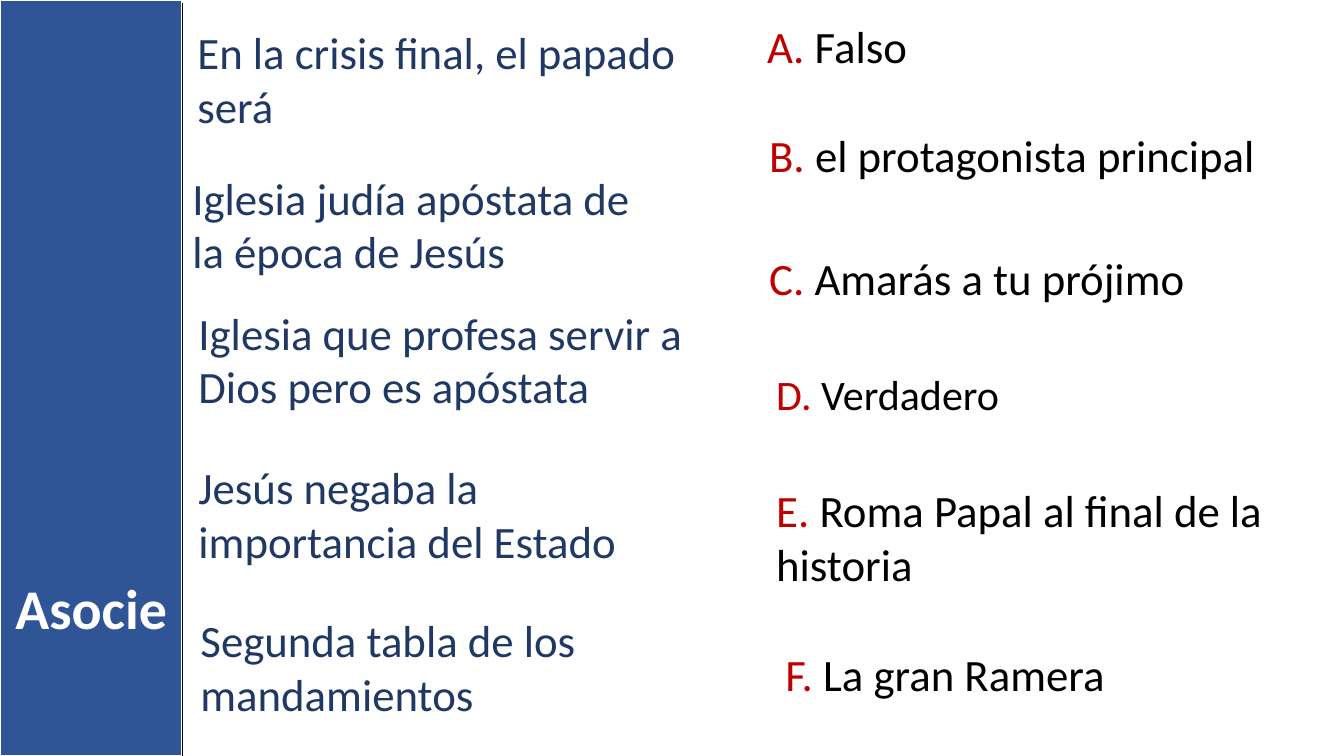
from dataclasses import dataclass

from lxml import etree
from pptx import Presentation
from pptx.dml.color import RGBColor
from pptx.enum.shapes import MSO_CONNECTOR, MSO_SHAPE
from pptx.enum.text import MSO_AUTO_SIZE, PP_ALIGN
from pptx.oxml.ns import qn
from pptx.util import Inches, Pt


@dataclass(frozen=True)
class Theme:
    font: str = "Calibri"
    band: RGBColor = RGBColor(0x2F, 0x55, 0x97)
    white: RGBColor = RGBColor(0xFF, 0xFF, 0xFF)
    black: RGBColor = RGBColor(0, 0, 0)
    prompt: RGBColor = RGBColor(0x20, 0x38, 0x64)
    letter: RGBColor = RGBColor(0xC0, 0, 0)
    title_size: int = 40
    body_size: int = 32
    small_size: int = 30


THEME = Theme()
SLIDE_W, SLIDE_H = 13.33, 7.5
BAND_W = 1.81
LEFT_X, RIGHT_X = BAND_W, 7.5
ONE_LINE, TWO_LINES = 0.64, 1.18

# Offset from the column's left edge, top, width, text
PROMPTS = [
    (0.05, 0.2, 5.11, "En la crisis final, el papado será"),
    (0, 1.64, 4.94, "Iglesia judía apóstata de la época de Jesús"),
    (0.06, 2.98, 5.1, "Iglesia que profesa servir a Dios pero es apóstata"),
    (0.06, 4.51, 4.94, "Jesús negaba la importancia del Estado"),
    (0.08, 6.03, 4.77, "Segunda tabla de los mandamientos"),
]
# Offset, top, width, height, type size, text
ANSWERS = [
    (0.01, 0.14, 5.04, ONE_LINE, THEME.body_size, "Falso"),
    (0.03, 1.22, 5.29, ONE_LINE, THEME.body_size, "el protagonista principal"),
    (0.03, 2.44, 4.88, ONE_LINE, THEME.body_size, "Amarás a tu prójimo"),
    (0.1, 3.61, 5.29, 0.61, THEME.small_size, "Verdadero"),
    (0.1, 4.74, 5.53, TWO_LINES, THEME.body_size, "Roma Papal al final de la historia"),
    (0.19, 6.37, 4.97, ONE_LINE, THEME.body_size, "La gran Ramera"),
]


def add_text(slide, box, runs, size):
    """Add one paragraph made of (text, colour) runs and return it."""
    tf = slide.shapes.add_textbox(*map(Inches, box)).text_frame
    tf.word_wrap = True
    tf.auto_size = MSO_AUTO_SIZE.SHAPE_TO_FIT_TEXT
    p = tf.paragraphs[0]
    p.font.name = THEME.font
    p.font.size = Pt(size)
    for text, color in runs:
        r = p.add_run()
        r.text = text
        r.font.color.rgb = color
    return p


def add_band(slide, x, y, w, h):
    sp = slide.shapes.add_shape(MSO_SHAPE.RECTANGLE, *map(Inches, (x, y, w, h)))
    sp.shadow.inherit = False
    sp.fill.solid()
    sp.fill.fore_color.rgb = THEME.band
    sp.line.color.rgb = THEME.white
    sp.line.width = Pt(1.5)


def add_band_title(slide, x, y, w, h, title):
    """Add the band's title and the rule along the band's right edge."""
    p = add_text(slide, (x, y + 5.64, w, 0.77), [(title, THEME.white)], THEME.title_size)
    p.alignment = PP_ALIGN.CENTER
    p.font.bold = True
    rule = slide.shapes.add_connector(
        MSO_CONNECTOR.STRAIGHT, *map(Inches, (x + w, y + 0.03, x + w, y + h)))
    rule.line.color.rgb = THEME.black
    rule.line.width = Pt(1)
    etree.SubElement(rule._element.spPr, qn("a:effectLst"))


def add_prompts(slide, x, y):
    for dx, top, w, text in PROMPTS:
        add_text(slide, (x + dx, y + top, w, TWO_LINES),
                 [(text, THEME.prompt)], THEME.body_size)


def add_answers(slide, x, y):
    for letter, (dx, top, w, h, size, text) in zip("ABCDEF", ANSWERS):
        add_text(slide, (x + dx, y + top, w, h),
                 [(f"{letter}. ", THEME.letter), (text, THEME.black)], size)


def main():
    prs = Presentation()
    prs.slide_width, prs.slide_height = Inches(SLIDE_W), Inches(SLIDE_H)
    slide = prs.slides.add_slide(prs.slide_layouts[6])
    band = (0, 0, BAND_W, SLIDE_H)
    add_band(slide, *band)
    add_prompts(slide, LEFT_X, 0)
    add_answers(slide, RIGHT_X, 0)
    add_band_title(slide, *band, "Asocie")
    prs.save("out.pptx")


if __name__ == "__main__":
    main()
